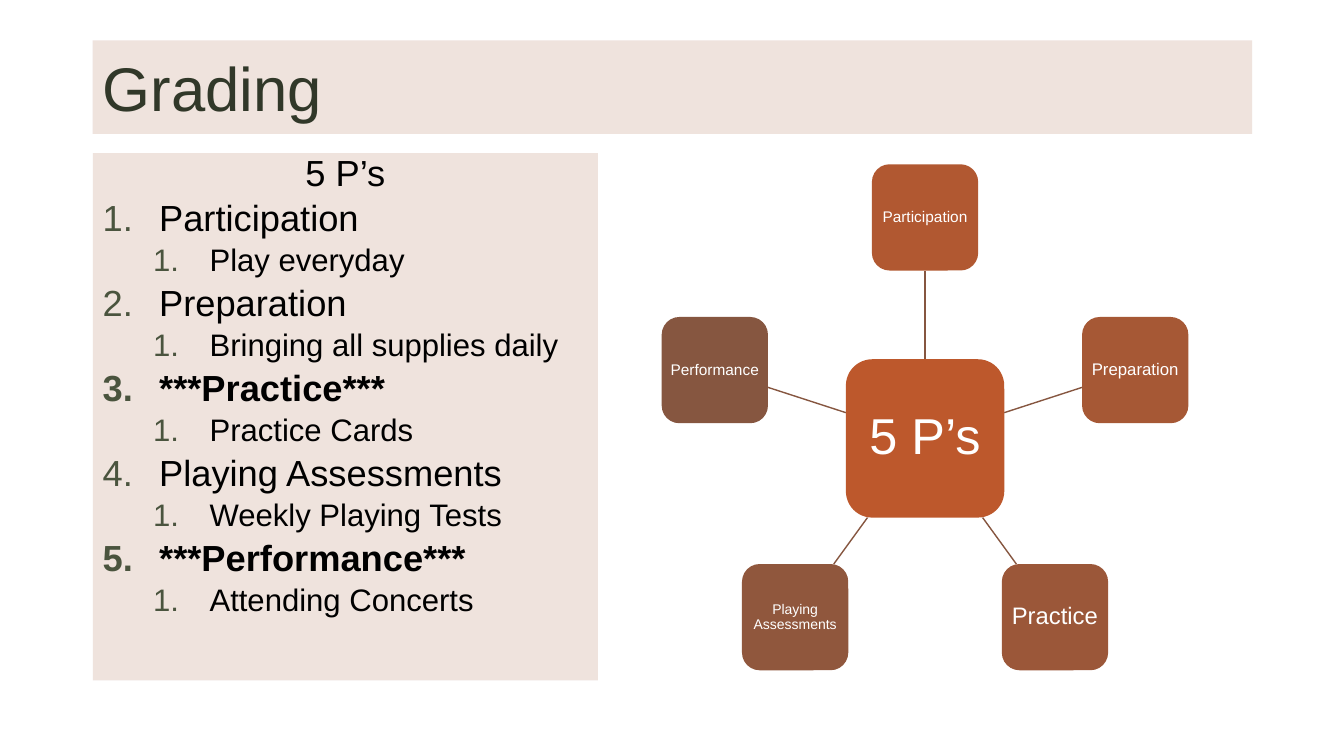
from math import cos, radians, sin

from lxml.etree import SubElement
from pptx import Presentation
from pptx.dml.color import RGBColor
from pptx.enum.shapes import MSO_CONNECTOR, MSO_SHAPE as Shape
from pptx.enum.text import MSO_ANCHOR as Anchor, PP_ALIGN as Align
from pptx.oxml.ns import qn
from pptx.util import Inches, Pt

FONT = "Arial"
PANEL, LINE, NUMBER = "EBDCD5", "865640", "4A543E"
OUTLINE = [
    ("Participation", "Play everyday", False),
    ("Preparation", "Bringing all supplies daily", False),
    ("***Practice***", "Practice Cards", True),
    ("Playing Assessments", "Weekly Playing Tests", False),
    ("***Performance***", "Attending Concerts", True),
]
# Clockwise from the top: label, text size, fill
NODES = [
    ("Participation", 11, "B15831"),
    ("Preparation", 12, "A65835"),
    ("Practice", 17, "9B5739"),
    ("Playing Assessments", 10, "90573D"),
    ("Performance", 11, "865640"),
]


def paint(color_format, color):
    color_format.rgb = RGBColor.from_string(color)


def style(para, size, color, bold=False):
    font = para.font
    font.name, font.size, font.bold = FONT, Pt(size), bold
    paint(font.color, color)


def add_block(page, kind, box, fill):
    block = page.shapes.add_shape(kind, *map(Inches, box))
    block.shadow.inherit = False
    block.fill.solid()
    paint(block.fill.fore_color, fill)
    block.line.fill.background()
    block.text_frame.word_wrap = True
    return block


def add_panel(page, box, anchor):
    """Add a translucent rectangle and return its text frame."""
    panel = add_block(page, Shape.RECTANGLE, box, PANEL)
    color = panel.fill._xPr.find(qn("a:solidFill"))[0]
    SubElement(color, qn("a:alpha"), val="80000")
    panel.text_frame.vertical_anchor = anchor
    return panel.text_frame


def add_title(page, box):
    para = add_panel(page, box, Anchor.MIDDLE).paragraphs[0]
    para.text = "Grading"
    para.alignment = Align.LEFT
    style(para, 44, "313829")


def number(para, indent):
    props = para._p.get_or_add_pPr()
    props.set("marL", str(Inches(indent)))
    props.set("indent", str(Inches(-0.56)))
    color = SubElement(props, qn("a:buClr"))
    SubElement(color, qn("a:srgbClr"), val=NUMBER)
    SubElement(props, qn("a:buFont"), typeface="+mj-lt")
    SubElement(props, qn("a:buAutoNum"), type="arabicPeriod")


def add_outline(page, box):
    frame = add_panel(page, box, Anchor.TOP)
    heading = frame.paragraphs[0]
    heading.text = "5 P’s"
    heading.alignment = Align.CENTER
    heading.line_spacing = 0.8
    style(heading, 25.9, "000000")
    for topic, detail, bold in OUTLINE:
        for level, text in enumerate((topic, detail)):
            size = (25.9, 22.2)[level]
            para = frame.add_paragraph()
            para.text = text
            para.level = level
            para.alignment = Align.LEFT
            para.line_spacing = 0.8
            para.space_before = Pt(0.3 * size)
            number(para, (0.56, 1.06)[level])
            style(para, size, "000000", bold and level == 0)


def add_tile(page, center, side, text, size, fill, inset):
    box = (center[0] - side / 2, center[1] - side / 2, side, side)
    tile = add_block(page, Shape.ROUNDED_RECTANGLE, box, fill)
    frame = tile.text_frame
    frame.vertical_anchor = Anchor.MIDDLE
    frame.margin_left = frame.margin_right = Inches(inset)
    frame.margin_top = frame.margin_bottom = Inches(inset)
    para = frame.paragraphs[0]
    para.text = text
    para.alignment = Align.CENTER
    para.line_spacing = 0.9
    style(para, size, "FFFFFF")
    return tile


def add_wheel(page, box):
    """Place the nodes evenly on a circle around a central hub."""
    left, top, width, height = box
    node_side, hub_side = 0.21 * height, 0.313 * height
    radius = (height - node_side) / (1 + cos(radians(36)))
    hub_x, hub_y = left + width / 2, top + node_side / 2 + radius
    hub = add_tile(page, (hub_x, hub_y), hub_side, "5 P’s", 36, "BD582C", 0.1)
    for index, (label, size, fill) in enumerate(NODES):
        angle = radians(index * 360 / len(NODES))
        across, down = sin(angle), -cos(angle)
        reach = 2 * max(abs(across), abs(down))
        center = (hub_x + radius * across, hub_y + radius * down)
        node = add_tile(page, center, node_side, label, size, fill, 0.01)
        start, end = hub_side / reach, radius - node_side / reach
        spoke = page.shapes.add_connector(
            MSO_CONNECTOR.STRAIGHT,
            Inches(hub_x + start * across), Inches(hub_y + start * down),
            Inches(hub_x + end * across), Inches(hub_y + end * down))
        if index == 0:
            spoke.begin_connect(hub, 0)
            spoke.end_connect(node, 2)
        spoke.line.width = Pt(1)
        paint(spoke.line.color, LINE)
        SubElement(spoke._element.spPr, qn("a:effectLst"))


def main():
    deck = Presentation()
    deck.slide_width, deck.slide_height = Inches(13.33), Inches(7.5)
    page = deck.slides.add_slide(deck.slide_layouts[6])
    add_title(page, (0.92, 0.4, 11.5, 0.93))
    add_wheel(page, (6.56, 1.63, 5.23, 5.02))
    add_outline(page, (0.92, 1.52, 5.01, 5.23))
    deck.save("out.pptx")


if __name__ == "__main__":
    main()
